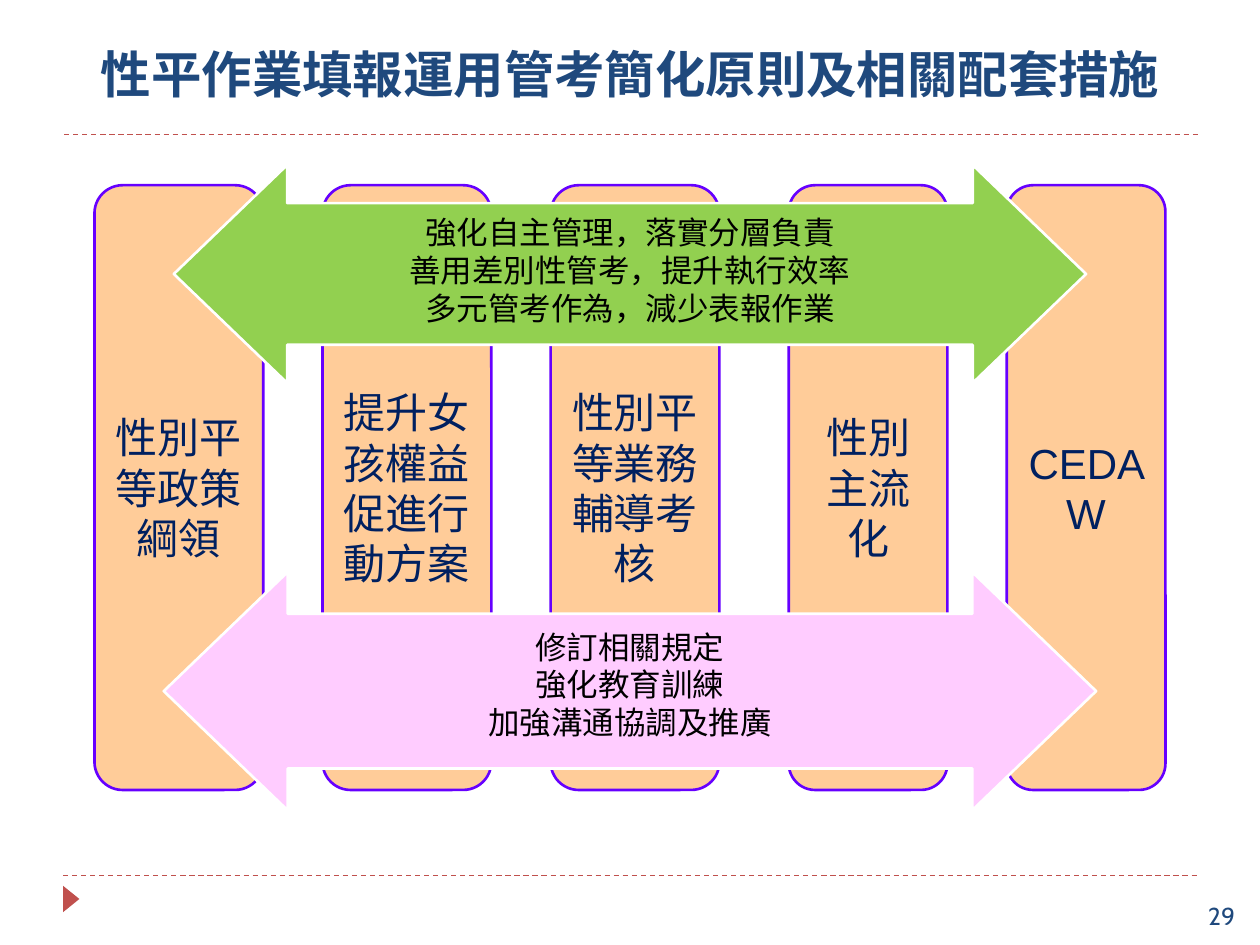
import pptx
import pptx.util
from pptx.dml.color import RGBColor
from pptx.enum.dml import MSO_LINE
from pptx.enum.shapes import MSO_CONNECTOR, MSO_SHAPE
from pptx.enum.text import MSO_ANCHOR, MSO_AUTO_SIZE, PP_ALIGN
from pptx.oxml.ns import qn
from pptx.util import Inches
from lxml import etree

RED = RGBColor(0xC0, 0x50, 0x4D)
BLUE = RGBColor(0x1F, 0x49, 0x7D)
NAVY = RGBColor(0x00, 0x20, 0x60)
PEACH = RGBColor(0xFF, 0xCC, 0x99)
VIOLET = RGBColor(0x66, 0x00, 0xFF)
GREEN = RGBColor(0x92, 0xD0, 0x50)
PINK = RGBColor(0xFF, 0xCC, 0xFF)
WHITE = RGBColor(0xFF, 0xFF, 0xFF)
BLACK = RGBColor(0x00, 0x00, 0x00)


def write(shape, *lines, size, color, font="Arial", bold=False,
          align=PP_ALIGN.CENTER, anchor=MSO_ANCHOR.MIDDLE, wrap=True):
    frame = shape.text_frame
    frame.auto_size = MSO_AUTO_SIZE.NONE
    frame.word_wrap = wrap
    frame.vertical_anchor = anchor
    frame.text = "\n".join(lines)
    for paragraph in frame.paragraphs:
        paragraph.alignment = align
        paragraph.font.size = pptx.util.Pt(size)
        paragraph.font.name = font
        paragraph.font.bold = bold
        paragraph.font.color.rgb = color


def add_block(kind, left, top, width, height, fill, outline=None):
    block = slide.shapes.add_shape(
        kind, Inches(left), Inches(top), Inches(width), Inches(height))
    block.shadow.inherit = False
    block.fill.solid()
    block.fill.fore_color.rgb = fill
    if outline is None:
        block.line.fill.background()
    else:
        block.line.color.rgb = outline
        block.line.width = pptx.util.Pt(1.5)
    return block


presentation = pptx.Presentation()
presentation.slide_width = Inches(10)
presentation.slide_height = Inches(7.5)
slide = presentation.slides.add_slide(presentation.slide_layouts[5])

# Dashed rules and corner marker
for left, top in [(0.5, 6.95), (0.51, 1.07)]:
    rule = slide.shapes.add_connector(
        MSO_CONNECTOR.STRAIGHT, Inches(left), Inches(top), Inches(left + 9), Inches(top))
    rule.line.color.rgb = RED
    rule.line.width = pptx.util.Pt(0.75)
    rule.line.dash_style = MSO_LINE.DASH
    etree.SubElement(rule.element.spPr, qn("a:effectLst"))

marker = add_block(MSO_SHAPE.ISOSCELES_TRIANGLE, 0.46, 7.07, 0.21, 0.13, RED)
marker.rotation = 90

# Title
title = slide.shapes.title
title.left, title.top = Inches(0.5), Inches(0.17)
title.width, title.height = Inches(9), Inches(0.83)
write(title, "性平作業填報運用管考簡化原則及相關配套措施",
      size=28.8, color=BLUE, font="Roboto Slab", bold=True)

# Policy pillars
pillars = [
    (0.75, 1.34, "性別平等政策綱領"),
    (2.56, 1.34, "提升女孩權益促進行動方案"),
    (4.37, 1.34, "性別平等業務輔導考核"),
    (6.26, 1.26, "性別主流化"),
    (7.99, 1.26, "CEDAW"),
]
for left, width, policy in pillars:
    pillar = add_block(MSO_SHAPE.ROUNDED_RECTANGLE, left, 1.47, width, 4.8, PEACH, VIOLET)
    write(pillar, policy, size=24, color=NAVY)

# Double arrows across the pillars
measures = [
    (1.38, 1.31, 7.24, 1.73, GREEN, 0.08,
     ["強化自主管理，落實分層負責", "善用差別性管考，提升執行效率", "多元管考作為，減少表報作業"]),
    (1.3, 4.54, 7.4, 1.89, PINK, 0.11,
     ["修訂相關規定", "強化教育訓練", "加強溝通協調及推廣"]),
]
for left, top, width, height, fill, inset, lines in measures:
    arrow = add_block(MSO_SHAPE.LEFT_RIGHT_ARROW, left, top, width, height, fill, WHITE)
    arrow.adjustments[0] = 0.65
    arrow.adjustments[1] = 0.52
    write(arrow, *lines, size=18, color=BLACK, anchor=MSO_ANCHOR.TOP, wrap=False)
    arrow.text_frame.margin_top = Inches(inset)
    arrow.text_frame.margin_bottom = 0

# Page number
page_number = slide.shapes.add_textbox(Inches(9.49), Inches(7.1), Inches(0.51), Inches(0.4))
write(page_number, "29", size=14, color=BLUE, font="Cabin",
      align=PP_ALIGN.LEFT, anchor=MSO_ANCHOR.TOP)

presentation.save("out.pptx")
